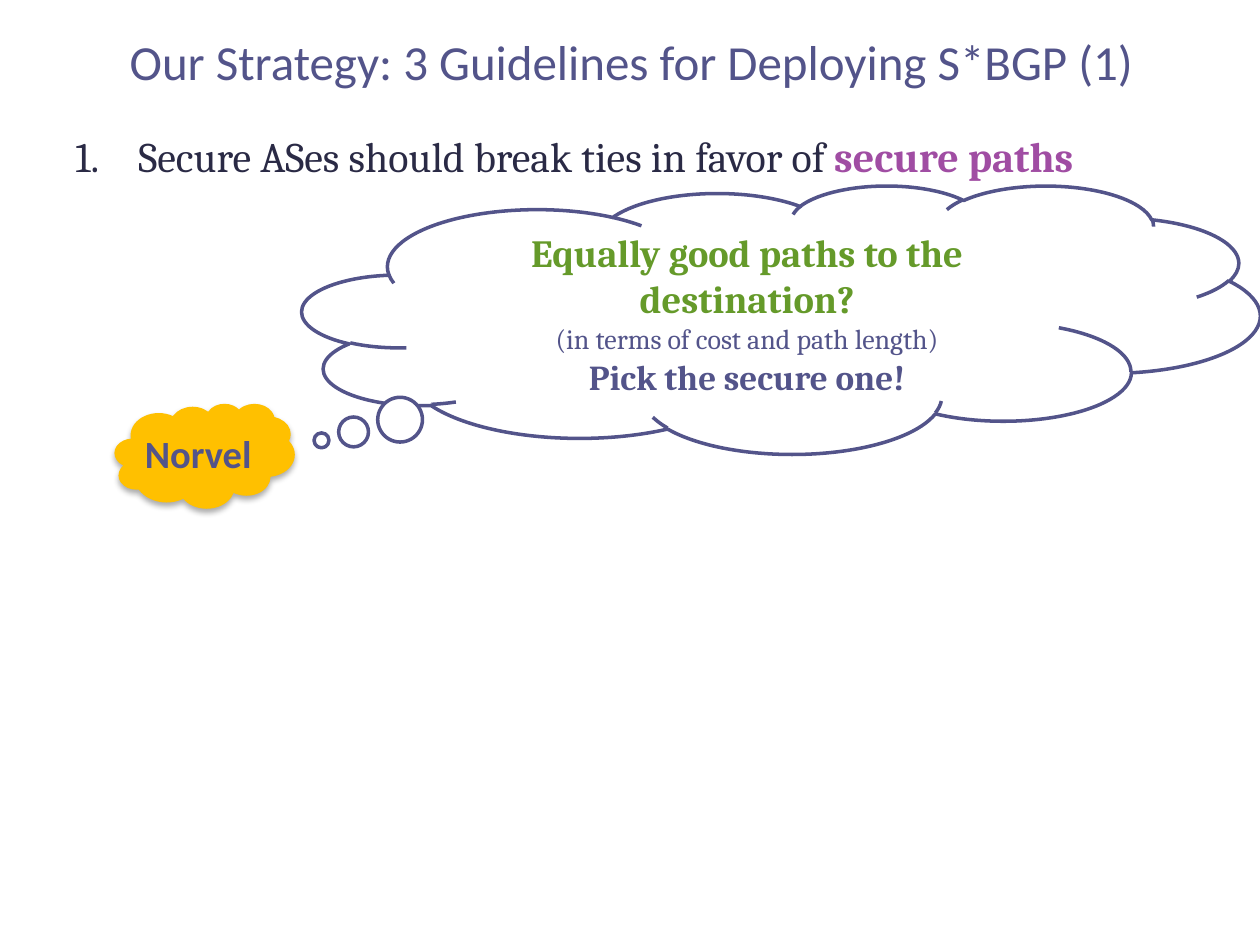
from lxml.etree import SubElement as Sub
from pptx import Presentation
from pptx.dml.color import RGBColor as Color
from pptx.enum.shapes import MSO_SHAPE as Kind
from pptx.enum.text import MSO_ANCHOR as Anchor, PP_ALIGN as Align
from pptx.oxml.ns import qn
from pptx.util import Inches, Pt

WIDE, HIGH = Inches(10), Inches(7.5)
SLATE, INK, PLUM = "53548A", "2A2A45", "A04DA3"
GREEN, GOLD, WHITE = "659A2A", "FFC000", "FFFFFF"
SANS, SERIF = "Calibri", "Cambria"


def paint(target, tone):
    if hasattr(target, "solid"):
        target.solid()
        target = target.fore_color
    target.rgb = Color.from_string(tone)


def place(left, top, width, height):
    return [int(WIDE * left), int(HIGH * top), int(WIDE * width), int(HIGH * height)]


def write(shape, lines, face, align=Align.CENTER, anchor=Anchor.MIDDLE, wrap=True):
    frame = shape.text_frame
    frame.word_wrap = wrap
    frame.vertical_anchor = anchor
    for row, runs in enumerate(lines):
        para = frame.add_paragraph() if row else frame.paragraphs[0]
        para.alignment = align
        for words, size, tone, bold in runs:
            run = para.add_run()
            run.text = words
            run.font.name = face
            run.font.size = Pt(size)
            run.font.bold = bold
            paint(run.font.color, tone)
    return frame


def add_text(slide, box, lines, face, **style):
    return write(slide.shapes.add_textbox(*place(*box)), lines, face, **style)


def add_cloud(slide, kind, box, fill, edge=None):
    cloud = slide.shapes.add_shape(kind, *place(*box))
    cloud.shadow.inherit = False
    paint(cloud.fill, fill)
    if edge:
        paint(cloud.line.fill, edge)
        cloud.line.width = Pt(2)
    else:
        cloud.line.fill.background()
    return cloud


def number(para):
    para.space_before = Pt(4.8)
    props = para._p.get_or_add_pPr()
    props.set("marL", str(Inches(0.5)))
    props.set("indent", str(-Inches(0.5)))
    Sub(props, qn("a:buFont"), typeface="+mj-lt")
    Sub(props, qn("a:buAutoNum"), type="arabicPeriod")


def shade(shape):
    glow = Sub(shape._element.spPr.find(qn("a:effectLst")), qn("a:outerShdw"),
               blurRad=str(Pt(3.5)), dist=str(Pt(2.2)), dir="5400000", rotWithShape="0")
    tone = Sub(glow, qn("a:srgbClr"), val="000000")
    Sub(tone, qn("a:alpha"), val="32000")


def main():
    deck = Presentation()
    deck.slide_width, deck.slide_height = WIDE, HIGH
    slide = deck.slides.add_slide(deck.slide_layouts[6])

    title = "Our Strategy: 3 Guidelines for Deploying S*BGP (1)"
    add_text(slide, (0.051, 0.017, 0.9, 0.095), [[(title, 28, SLATE, False)]], SANS)

    rule = [("Secure ASes should break ties in favor of ", 24, INK, False),
            ("secure paths", 24, PLUM, True)]
    body = add_text(slide, (0.05, 0.132, 0.9, 0.777), [rule], SERIF,
                    align=Align.LEFT, anchor=Anchor.TOP)
    number(body.paragraphs[0])

    node = add_cloud(slide, Kind.CLOUD, (0.091, 0.427, 0.143, 0.111), GOLD)
    shade(node)
    write(node, [[("Norvel", 22, SLATE, True)]], SANS, wrap=False)

    thought = add_cloud(slide, Kind.CLOUD_CALLOUT, (0.24, 0.196, 0.76, 0.284), WHITE, SLATE)
    thought.adjustments[0], thought.adjustments[1] = -0.48, 0.451
    write(thought, [
        [("Equally good paths to the destination?", 22, GREEN, True)],
        [("(in terms of cost and path length)", 16, SLATE, False)],
        [("Pick the secure one!", 20, SLATE, True)],
    ], SERIF)

    deck.save("out.pptx")


if __name__ == "__main__":
    main()
